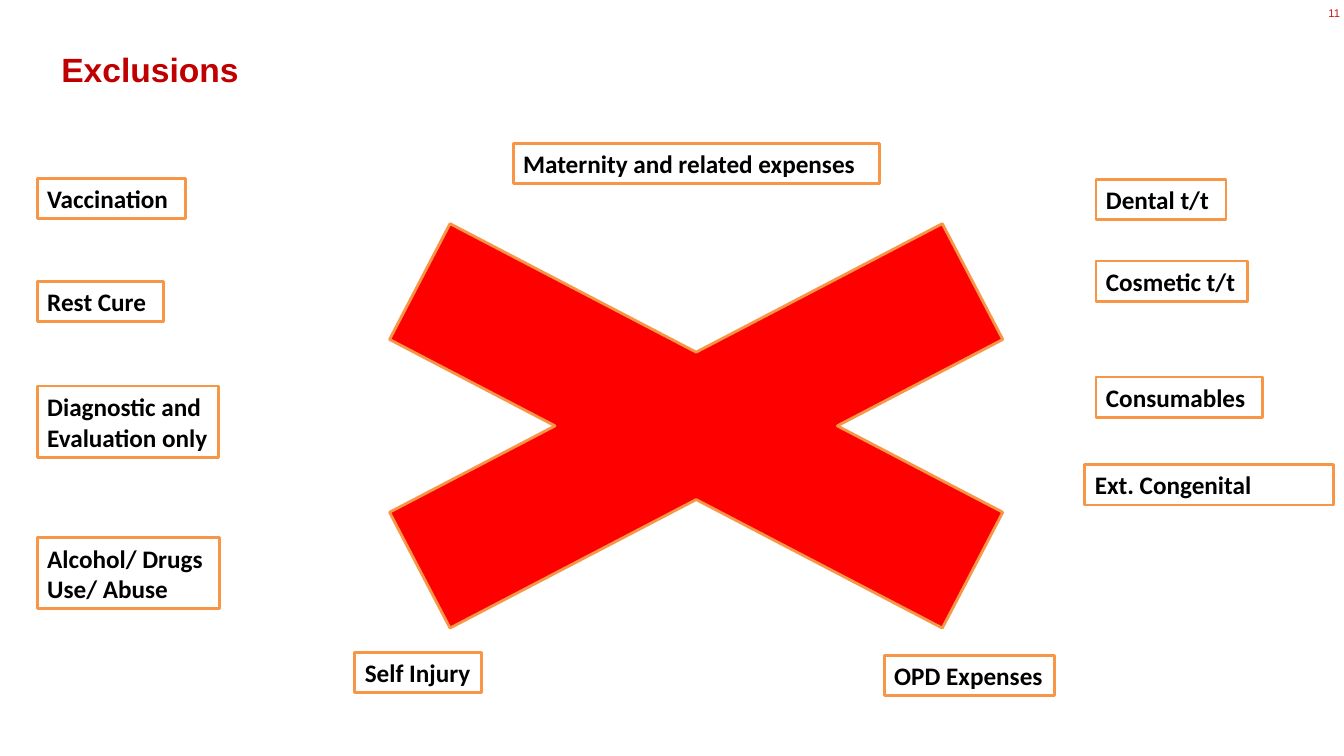
from pptx import Presentation
from pptx.dml.color import RGBColor
from pptx.enum import shapes, text
from pptx.util import Inches, Pt

RED, ORANGE, WHITE, BLACK = "FF0000", "F79646", "FFFFFF", "000000"


def add_outlined(kind, left, top, width, height, fill):
    """Add a preset shape with the slide's orange outline."""
    shape = page.shapes.add_shape(
        kind, Inches(left), Inches(top), Inches(width), Inches(height))
    shape.shadow.inherit = False
    shape.fill.solid()
    shape.fill.fore_color.rgb = RGBColor.from_string(fill)
    shape.line.color.rgb = RGBColor.from_string(ORANGE)
    shape.line.width = Pt(2)
    return shape


def write(box, words, font, size, color, bold, align=text.PP_ALIGN.LEFT):
    """Fill a box with one paragraph per line, vertically centred."""
    frame = box.text_frame
    frame.word_wrap = True
    frame.vertical_anchor = text.MSO_ANCHOR.MIDDLE
    frame.text = words
    for para in frame.paragraphs:
        para.alignment = align
        for span in para.runs:
            span.font.name = font
            span.font.size = Pt(size)
            span.font.bold = bold
            span.font.color.rgb = RGBColor.from_string(color)


deck = Presentation()
deck.slide_width, deck.slide_height = Inches(13.33), Inches(7.5)
page = deck.slides.add_slide(deck.slide_layouts[6])

number = page.shapes.add_textbox(Inches(13), Inches(0.06), Inches(0.29), Inches(0.19))
write(number, "11", "Arial", 8, "C21B17", False, text.PP_ALIGN.RIGHT)
frame = number.text_frame
frame.margin_left = frame.margin_right = frame.margin_top = frame.margin_bottom = 0
frame.vertical_anchor = text.MSO_ANCHOR.TOP

title = page.shapes.add_textbox(Inches(0.51), Inches(0.47), Inches(12.23), Inches(0.53))
write(title, "Exclusions", "Arial", 24, "C00000", True)
title.text_frame.paragraphs[0].line_spacing = Pt(22)

add_outlined(shapes.MSO_SHAPE.MATH_MULTIPLY, 1.63, 1.47, 10.55, 5.51, RED)

LEFT_COLUMN, RIGHT_COLUMN = 0.37, 10.87
exclusions = [
    ("Vaccination", LEFT_COLUMN, 1.77, 1.47),
    ("Maternity and related expenses", 5.09, 1.42, 3.63),
    ("Rest Cure", LEFT_COLUMN, 2.79, 1.25),
    ("Diagnostic and\nEvaluation only", LEFT_COLUMN, 3.83, 1.8),
    ("Alcohol/ Drugs\nUse/ Abuse", LEFT_COLUMN, 5.33, 1.81),
    ("Self Injury", 3.52, 6.47, 1.26),
    ("Dental t/t", RIGHT_COLUMN, 1.78, 1.29),
    ("Cosmetic t/t", RIGHT_COLUMN, 2.59, 1.5),
    ("Consumables", RIGHT_COLUMN, 3.74, 1.65),
    ("Ext. Congenital", 10.76, 4.61, 2.47),
    ("OPD Expenses", 8.77, 6.5, 1.69),
]
for words, left, top, width in exclusions:
    height = 0.71 if "\n" in words else 0.4
    label = add_outlined(shapes.MSO_SHAPE.RECTANGLE, left, top, width, height, WHITE)
    label.text_frame.margin_right = 0
    write(label, words, "Calibri", 18, BLACK, True)

deck.save("out.pptx")
